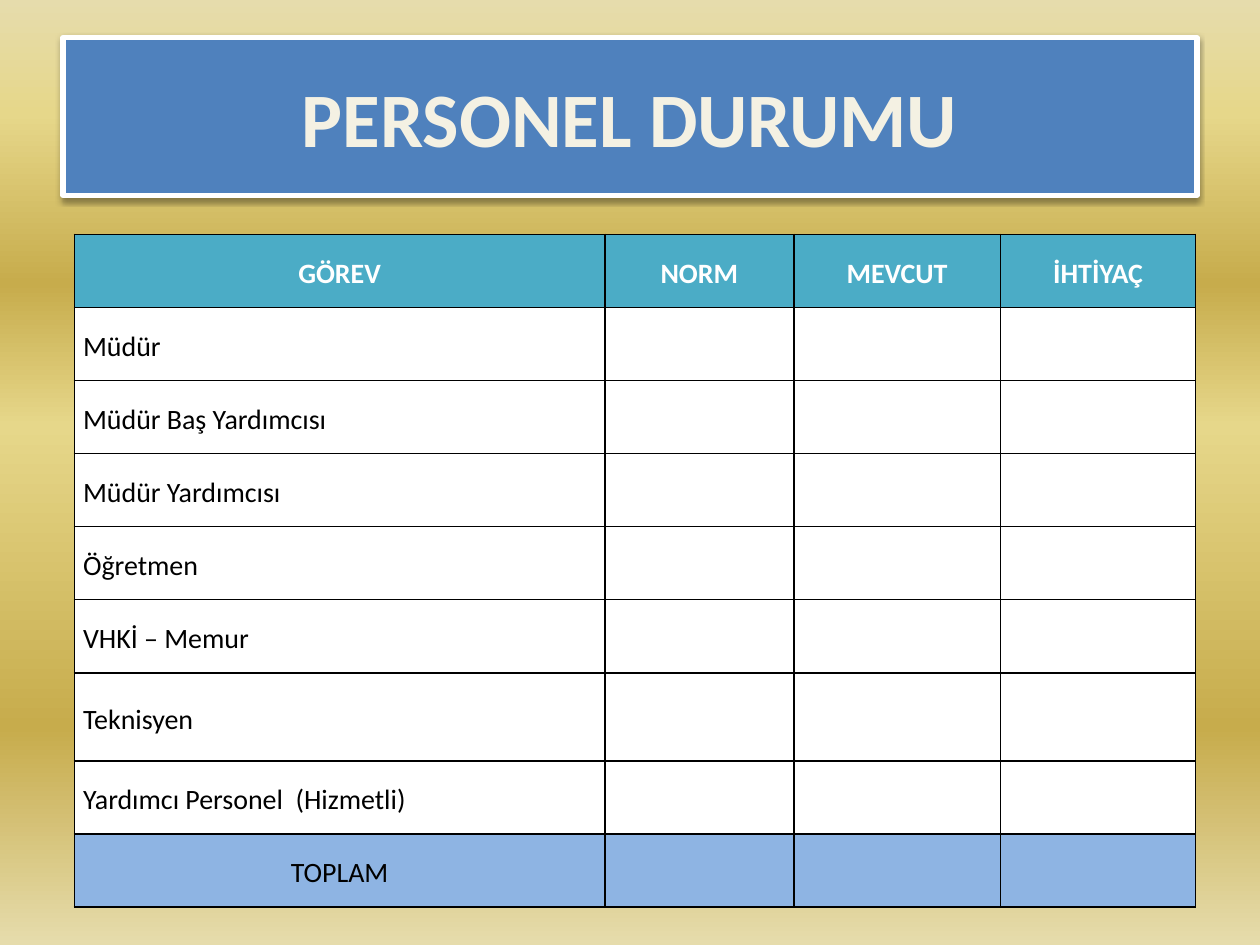
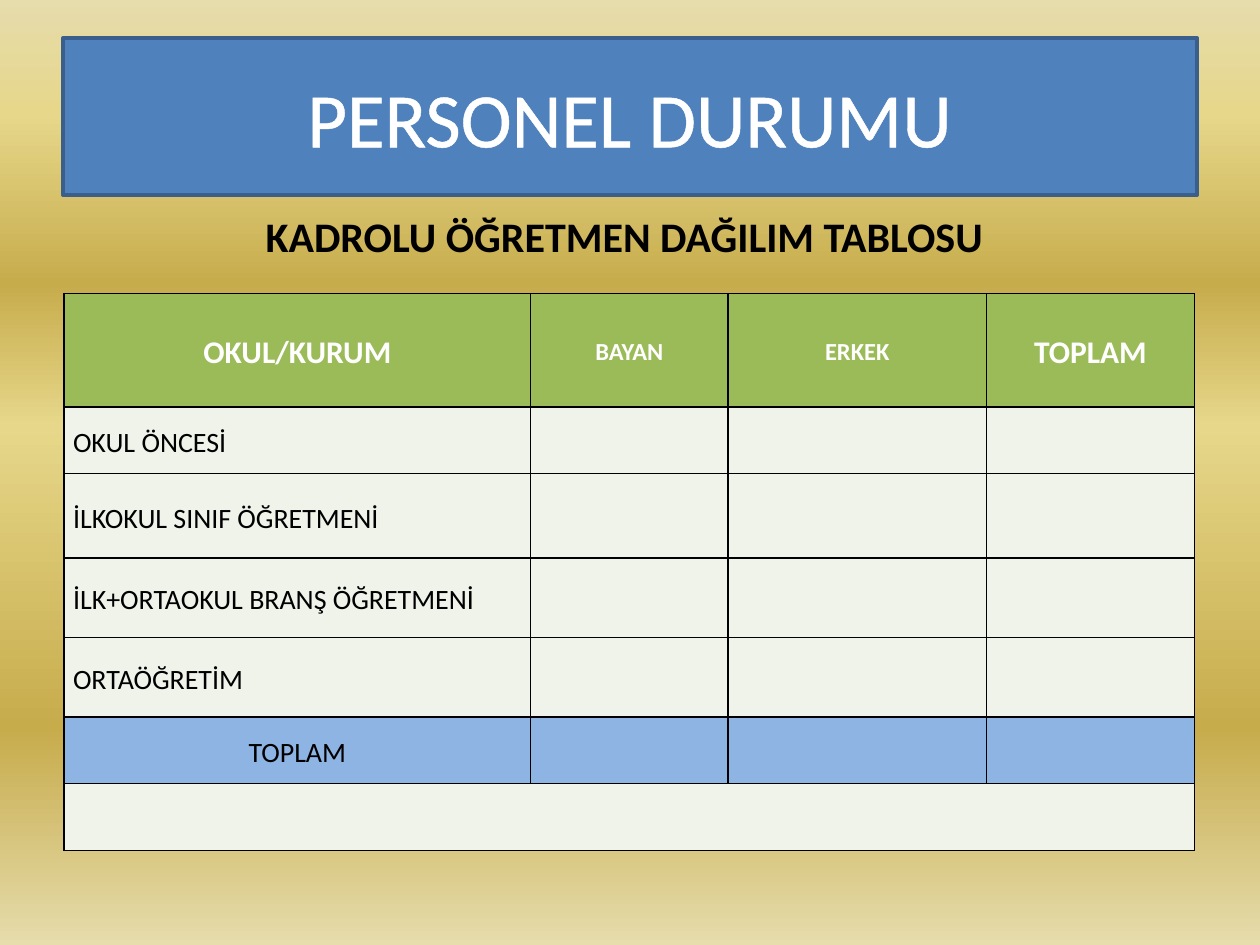
import pptx
import pptx.util
import pptx.dml.color
import pptx.enum.text
import pptx.oxml
import pptx.oxml.ns

Inches = pptx.util.Inches
Pt = pptx.util.Pt
CENTER = pptx.enum.text.PP_ALIGN.CENTER
LEFT = pptx.enum.text.PP_ALIGN.LEFT
MIDDLE = pptx.enum.text.MSO_ANCHOR.MIDDLE

# Shared look
FONT = "Calibri"
BLUE, TOTAL_BLUE = "4F81BD", "8EB4E3"
WHITE, BLACK = "FFFFFF", "000000"
GOLD_STOPS = [(0, "E6DCAC"), (12, "E6D78A"), (30, "C7AC4C"),
              (45, "E6D78A"), (77, "C7AC4C"), (100, "E6DCAC")]
TOTAL = "TOPLAM"


def colour(hex_code):
    return pptx.dml.color.RGBColor.from_string(hex_code)


def xml_part(tag, attributes, content):
    """Build one DrawingML element from its tag, attributes and inner XML."""
    namespace = pptx.oxml.ns.nsdecls("a")
    return pptx.oxml.parse_xml(f"<a:{tag} {namespace} {attributes}>{content}</a:{tag}>")


# What differs from slide to slide
slides = [
    {
        "title": {"color": "F4F1E3", "bold": True, "outline": ("054697", 1),
                  "line": (WHITE, 3), "shadow": True},
        "subtitle": None,
        "place": (0.59, 1.86),
        "columns": [4.21, 1.5, 1.64, 1.55],
        "rows": [0.58] * 6 + [0.7] + [0.58] * 2,
        "header": [("GÖREV", 16), ("NORM", 16), ("MEVCUT", 16), ("İHTİYAÇ", 16)],
        "labels": ["Müdür", "Müdür Baş Yardımcısı", "Müdür Yardımcısı", "Öğretmen",
                   "VHKİ – Memur", "Teknisyen", "Yardımcı Personel  (Hizmetli)", TOTAL],
        "header_fill": "4BACC6",
        "body_fill": WHITE,
        "footer_row": False,
    },
    {
        "title": {"color": WHITE, "bold": False, "outline": (WHITE, 1.45),
                  "line": ("3A5F8C", 2), "shadow": False},
        "subtitle": "KADROLU ÖĞRETMEN DAĞILIM TABLOSU",
        "place": (0.51, 2.33),
        "columns": [3.7, 1.57, 2.05, 1.65],
        "rows": [0.9, 0.53, 0.67, 0.63, 0.63, 0.53, 0.53],
        "header": [("OKUL/KURUM", 18), ("BAYAN", 14), ("ERKEK", 14), (TOTAL, 18)],
        "labels": ["OKUL ÖNCESİ", "İLKOKUL SINIF ÖĞRETMENİ",
                   "İLK+ORTAOKUL BRANŞ ÖĞRETMENİ", "ORTAÖĞRETİM", TOTAL],
        "header_fill": "9BBB59",
        "body_fill": "EFF3EA",
        "footer_row": True,
    },
]

deck = pptx.Presentation()
deck.slide_width, deck.slide_height = Inches(10), Inches(7.5)
title_only = deck.slide_layouts[5]

for content in slides:
    page = deck.slides.add_slide(title_only)

    # Gold gradient background, running downwards
    background = page.background.fill
    background.gradient()
    gradient = page.background._cSld.find(".//" + pptx.oxml.ns.qn("a:gradFill"))
    for child in list(gradient):
        gradient.remove(child)
    stops = "".join(f'<a:gs pos="{position * 1000}"><a:srgbClr val="{shade}"/></a:gs>'
                    for position, shade in GOLD_STOPS)
    gradient.append(xml_part("gsLst", "", stops))
    gradient.append(xml_part("lin", 'ang="5400000" scaled="0"', ""))

    # Title band
    style = content["title"]
    title = page.shapes.title
    title.left, title.top = Inches(0.5), Inches(0.3)
    title.width, title.height = Inches(9), Inches(1.25)
    title.fill.solid()
    title.fill.fore_color.rgb = colour(BLUE)
    line_color, line_width = style["line"]
    title.line.color.rgb = colour(line_color)
    title.line.width = Pt(line_width)
    title.shadow.inherit = False
    if style["shadow"]:
        effects = title._element.spPr.find(pptx.oxml.ns.qn("a:effectLst"))
        effects.append(xml_part(
            "outerShdw",
            f'blurRad="{Pt(3.1)}" dist="{Pt(1.6)}" dir="5400000" rotWithShape="0"',
            f'<a:srgbClr val="{BLACK}"><a:alpha val="38000"/></a:srgbClr>'))
    title.text_frame.vertical_anchor = MIDDLE
    para = title.text_frame.paragraphs[0]
    para.alignment = CENTER
    span = para.add_run()
    span.text = "PERSONEL DURUMU"
    span.font.name, span.font.size = FONT, Pt(44)
    span.font.bold = style["bold"]
    span.font.color.rgb = colour(style["color"])
    outline_color, outline_width = style["outline"]
    span.font._element.insert(0, xml_part(
        "ln", f'w="{Pt(outline_width)}"',
        f'<a:solidFill><a:srgbClr val="{outline_color}"/></a:solidFill>'))

    # Staff table
    row_heights, column_widths = content["rows"], content["columns"]
    left, top = content["place"]
    frame = page.shapes.add_table(
        len(row_heights), len(column_widths), Inches(left), Inches(top),
        Inches(sum(column_widths)), Inches(sum(row_heights)))
    table = frame.table
    table.horz_banding = False
    for column, width in zip(table.columns, column_widths):
        column.width = Inches(width)
    for row, height in zip(table.rows, row_heights):
        row.height = Inches(height)

    # Fills and borders
    for row_index, row in enumerate(table.rows):
        label_index = row_index - 1
        is_total = (0 <= label_index < len(content["labels"])
                    and content["labels"][label_index] == TOTAL)
        if row_index == 0:
            fill = content["header_fill"]
        else:
            fill = TOTAL_BLUE if is_total else content["body_fill"]
        for cell in row.cells:
            cell.vertical_anchor = MIDDLE
            cell.margin_left = cell.margin_right = Inches(0.07)
            cell.margin_top = cell.margin_bottom = 0
            for side in ("lnL", "lnR", "lnT", "lnB"):
                cell._tc.get_or_add_tcPr().append(xml_part(
                    side, f'w="{Pt(1)}"',
                    f'<a:solidFill><a:srgbClr val="{BLACK}"/></a:solidFill>'))
            cell.fill.solid()
            cell.fill.fore_color.rgb = colour(fill)

    # Header and label texts: row, column, words, size, colour, bold, alignment
    entries = [(0, index, words, size, WHITE, True, CENTER)
               for index, (words, size) in enumerate(content["header"])]
    entries += [(index, 0, words, 16, BLACK, False, CENTER if words == TOTAL else LEFT)
                for index, words in enumerate(content["labels"], start=1)]
    for row_index, column_index, words, size, shade, bold, alignment in entries:
        para = table.cell(row_index, column_index).text_frame.paragraphs[0]
        para.alignment = alignment
        para.line_spacing = 1.15
        span = para.add_run()
        span.text = words
        span.font.name, span.font.size = FONT, Pt(size)
        span.font.bold = bold
        span.font.color.rgb = colour(shade)

    # Closing row across the whole table
    if content["footer_row"]:
        last = len(row_heights) - 1
        table.cell(last, 0).merge(table.cell(last, len(column_widths) - 1))

    # Subtitle between band and table
    if content["subtitle"]:
        box = page.shapes.add_textbox(Inches(2.01), Inches(1.62), Inches(5.95), Inches(0.81))
        box.text_frame.word_wrap = False
        span = box.text_frame.paragraphs[0].add_run()
        span.text = content["subtitle"]
        span.font.name, span.font.size = FONT, Pt(24)
        span.font.bold = True
        span.font.color.rgb = colour(BLACK)

deck.save("out.pptx")
